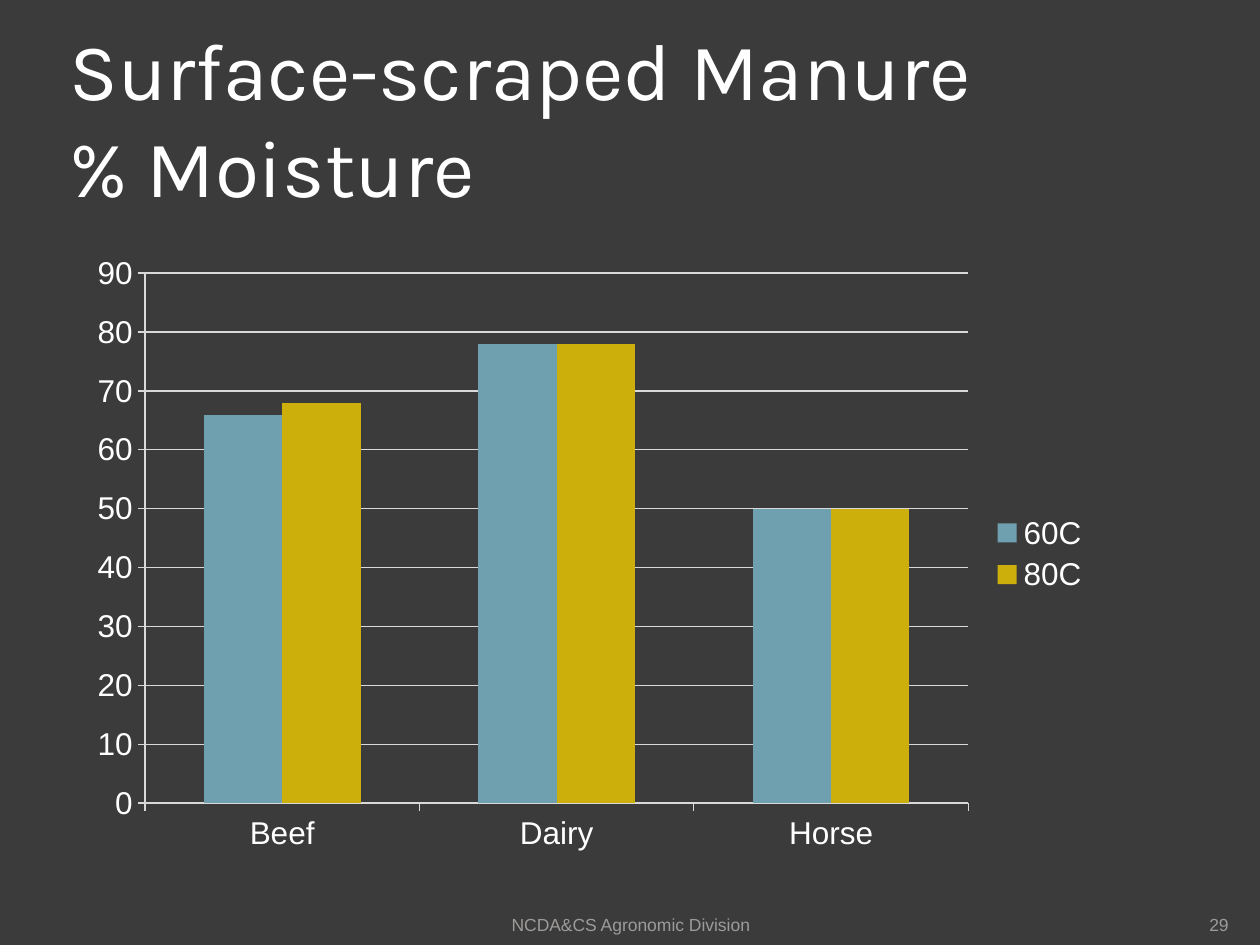
from lxml.etree import SubElement
from pptx import Presentation
from pptx.chart.data import CategoryChartData as ChartData
from pptx.dml.color import RGBColor
from pptx.enum.chart import XL_CHART_TYPE as Kind, XL_LEGEND_POSITION as Side, XL_TICK_MARK as Tick
from pptx.enum.text import MSO_ANCHOR as Anchor, MSO_AUTO_SIZE as Fit, PP_ALIGN as Align
from pptx.oxml.ns import qn
from pptx.util import Cm, Pt


def color(code):
    return RGBColor.from_string(code)


def write(frame, text, size=10, font="Arial", ink="9D9B9A", align=Align.LEFT,
          anchor=Anchor.BOTTOM, inset=0):
    frame.word_wrap = True
    frame.auto_size = Fit.NONE
    frame.vertical_anchor = anchor
    frame.margin_left = frame.margin_right = Cm(inset)
    frame.margin_top = frame.margin_bottom = Cm(inset)
    para = frame.paragraphs[0]
    para.text = text
    para.alignment = align
    for run in para.runs:
        run.font.size = Pt(size)
        run.font.name = font
        run.font.color.rgb = color(ink)


class Deck:
    back, ink, grid = "3B3B3B", "FFFFFF", "D9D9D9"

    def __init__(self):
        self.prs = Presentation()
        self.prs.slide_width, self.prs.slide_height = Cm(25.4), Cm(19.05)
        self.slide = self.prs.slides.add_slide(self.prs.slide_layouts[5])
        fill = self.slide.background.fill
        fill.solid()
        fill.fore_color.rgb = color(self.back)

    def title(self, text, x, y, w, h):
        box = self.slide.shapes.title
        box.left, box.top, box.width, box.height = map(Cm, (x, y, w, h))
        write(box.text_frame, text, size=46, font="Karla", ink=self.ink,
              anchor=Anchor.MIDDLE, inset=0.13)

    def label(self, text, x, y, w, h, **style):
        box = self.slide.shapes.add_textbox(*map(Cm, (x, y, w, h)))
        write(box.text_frame, text, **style)

    def columns(self, cats, series, x, y, w, h, plot):
        """Clustered columns; series holds (name, values, fill), plot the inner area in shares."""
        data = ChartData()
        data.categories = cats
        for name, vals, _ in series:
            data.add_series(name, vals)
        chart = self.slide.shapes.add_chart(
            Kind.COLUMN_CLUSTERED, *map(Cm, (x, y, w, h)), data).chart
        chart.has_title = False
        chart.font.size = Pt(18)
        chart.font.name = "Arial"
        chart.font.color.rgb = color(self.ink)
        chart.has_legend = True
        chart.legend.position = Side.RIGHT
        chart.legend.include_in_layout = False

        bars = chart.plots[0]
        bars.vary_by_categories = False
        bars.gap_width, bars.overlap = 150, 0
        for item, (_, _, tint) in zip(bars.series, series):
            item.format.fill.solid()
            item.format.fill.fore_color.rgb = color(tint)
            item.invert_if_negative = False

        axis = chart.value_axis
        axis.minimum_scale, axis.maximum_scale, axis.major_unit = 0, 90, 10
        axis.has_major_gridlines = True
        for part in (axis, chart.category_axis):
            part.major_tick_mark = Tick.OUTSIDE
        for part in (axis, chart.category_axis, axis.major_gridlines):
            part.format.line.color.rgb = color(self.grid)
            part.format.line.width = Pt(0.75)
        self.place(chart, plot)

    def place(self, chart, plot):
        area = chart._chartSpace.chart.plotArea
        layout = area.find(qn("c:layout"))
        if layout is None:
            layout = SubElement(area, qn("c:layout"))
            area.insert(0, layout)
        manual = SubElement(layout, qn("c:manualLayout"))
        rules = [("layoutTarget", "inner"), ("xMode", "edge"), ("yMode", "edge")]
        for tag, val in rules + list(zip("xywh", plot)):
            SubElement(manual, qn(f"c:{tag}")).set("val", str(val))


def main():
    deck = Deck()
    deck.title("Surface-scraped Manure \v% Moisture", 1.27, 0.76, 20.75, 3.18)
    deck.columns(["Beef", "Dairy", "Horse"],
                 [("60C", (66, 78, 50), "6EA0B0"), ("80C", (68, 78, 50), "CCAF0A")],
                 1.47, 4.88, 20.75, 12.57, plot=(0.07, 0.05, 0.8, 0.85))
    deck.label("NCDA&CS Agronomic Division", 8.69, 17.83, 8.05, 1.02, align=Align.CENTER)
    deck.label("29", 22.66, 17.83, 2.11, 1.02, align=Align.RIGHT)
    deck.prs.save("out.pptx")


if __name__ == "__main__":
    main()
